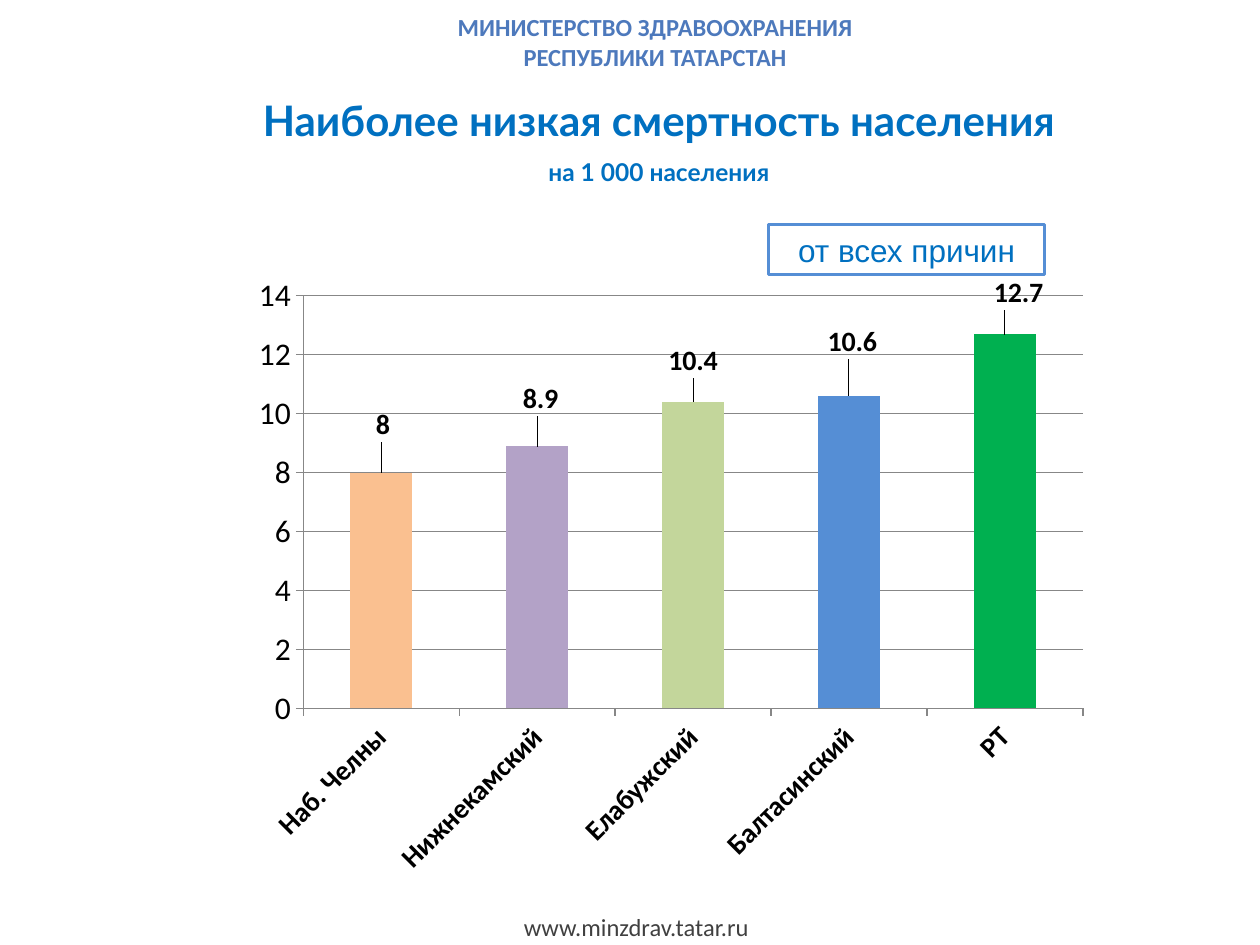
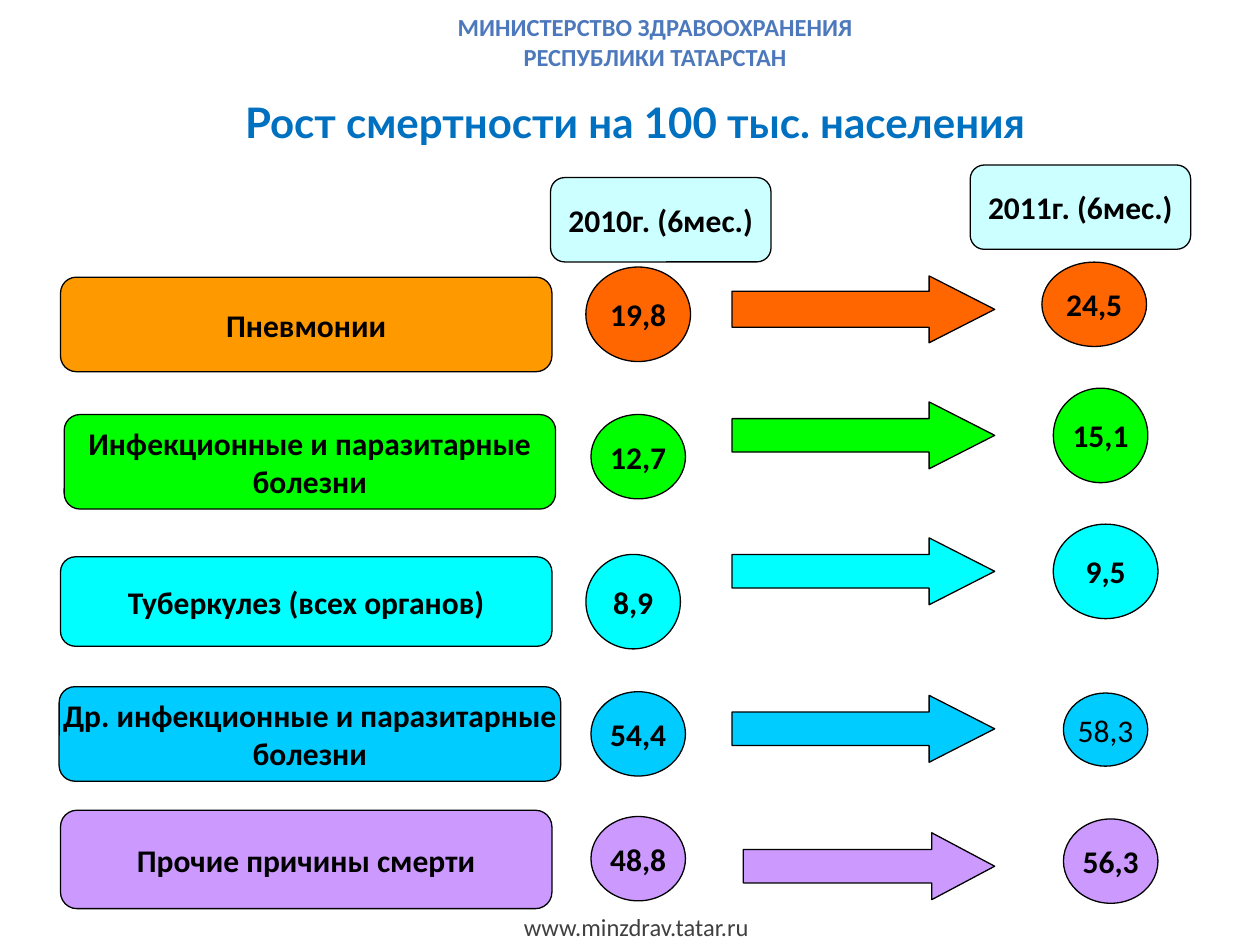
"""Build two slides on death rates: a column chart and a growth table of shapes."""
from lxml import etree
from pptx import Presentation
from pptx import util as u
from pptx.chart import data
from pptx.dml import color
from pptx.enum import chart as ch
from pptx.enum import shapes, text
from pptx.oxml import ns

RGB = color.RGBColor
BLACK = RGB(0, 0, 0)
GREY = RGB(0x40, 0x40, 0x40)
RULE = RGB(0x87, 0x87, 0x87)
HEAD = RGB(0x4D, 0x79, 0xBC)
BLUE = RGB(0x00, 0x70, 0xC0)
SKY = RGB(0x55, 0x8E, 0xD5)
PALE = RGB(0xCC, 0xFF, 0xFF)
AMBER = RGB(0xFF, 0x99, 0x00)
ORANGE = RGB(0xFF, 0x66, 0x00)
LIME = RGB(0x00, 0xFF, 0x00)
AQUA = RGB(0x00, 0xFF, 0xFF)
AZURE = RGB(0x00, 0xCC, 0xFF)
LILAC = RGB(0xCC, 0x99, 0xFF)
PEACH = RGB(0xFA, 0xC0, 0x90)
MAUVE = RGB(0xB3, 0xA2, 0xC7)
SAGE = RGB(0xC3, 0xD6, 0x9B)
GREEN = RGB(0x00, 0xB0, 0x50)

KIND = shapes.MSO_SHAPE
MID = text.PP_ALIGN.CENTER
TITLE = dict(name="Lato", size=24, bold=True, color=BLUE)
SUB = dict(TITLE, size=14)
TOP = dict(name="Calibri", size=14, bold=True, color=HEAD)
FOOT = dict(name="Calibri", size=14, color=GREY)
BODY = dict(name="Calibri", size=18, bold=True, color=BLACK)
PLAIN = dict(BODY, bold=False)
NOTE = dict(name="Arial", size=18, color=BLUE)
TICK = dict(BODY, size=16)

# Each column: name, value, bar colour, label shift as share of chart width and height


def style(font, form):
    """Apply a dict of format values to a font."""
    for key, val in form.items():
        if key == "color":
            font.color.rgb = val
        else:
            setattr(font, key, u.Pt(val) if key == "size" else val)


def write(frame, words, form, align=MID, wrap=True):
    """Fill a text frame, one paragraph for each line."""
    frame.word_wrap = wrap
    for num, line in enumerate(words.split("\n")):
        para = frame.add_paragraph() if num else frame.paragraphs[0]
        para.alignment = align
        run = para.add_run()
        run.text = line
        style(run.font, form)


def label(slide, spot, words, form, **opts):
    """Add a text box and return its frame."""
    frame = slide.shapes.add_textbox(*map(u.Pt, spot)).text_frame
    write(frame, words, form, **opts)
    frame.auto_size = text.MSO_AUTO_SIZE.SHAPE_TO_FIT_TEXT
    return frame


def block(slide, kind, spot, fill=None, words="", form=BODY, line=BLACK, width=0.75):
    """Add a preset shape with centred text."""
    shape = slide.shapes.add_shape(kind, *map(u.Pt, spot))
    shape.shadow.inherit = False
    if fill is None:
        shape.fill.background()
    else:
        shape.fill.solid()
        shape.fill.fore_color.rgb = fill
    shape.line.color.rgb = line
    shape.line.width = u.Pt(width)
    if words:
        write(shape.text_frame, words, form, wrap=False)
        shape.text_frame.vertical_anchor = text.MSO_ANCHOR.MIDDLE
    return shape


def page(deck):
    """Add a blank slide with the shared header and footer."""
    slide = deck.slides.add_slide(deck.slide_layouts[6])
    label(slide, (292.3, 517.7, 144, 24.2), "www.minzdrav.tatar.ru", FOOT,
          align=text.PP_ALIGN.LEFT, wrap=False)
    label(slide, (253.4, 3.6, 242, 41), "МИНИСТЕРСТВО ЗДРАВООХРАНЕНИЯ\nРЕСПУБЛИКИ ТАТАРСТАН",
          TOP, wrap=False)
    return slide


def place(node, index, **vals):
    """Insert a manual chart layout into a node."""
    lay = etree.Element(ns.qn("c:layout"))
    man = etree.SubElement(lay, ns.qn("c:manualLayout"))
    for key, val in vals.items():
        etree.SubElement(man, ns.qn("c:" + key)).set("val", str(val))
    node.insert(index, lay)


def draw_axis(axis, form):
    """Set the line, ticks and font of an axis."""
    axis.format.line.color.rgb = RULE
    axis.major_tick_mark = ch.XL_TICK_MARK.OUTSIDE
    axis.minor_tick_mark = ch.XL_TICK_MARK.NONE
    style(axis.tick_labels.font, form)


def draw_chart(slide, spot, cols):
    """Add the column chart with one colour and label shift per column."""
    info = data.CategoryChartData()
    info.categories = [col[0] for col in cols]
    info.add_series("Series 1", [col[1] for col in cols])
    chart = slide.shapes.add_chart(
        ch.XL_CHART_TYPE.COLUMN_CLUSTERED, *map(u.Pt, spot), info).chart
    chart.has_legend = chart.has_title = False
    style(chart.font, PLAIN)
    plot = chart.plots[0]
    plot.gap_width, plot.vary_by_categories = 150, False

    draw_axis(chart.category_axis, TICK)
    names = chart.category_axis._element.find(ns.qn("c:txPr"))
    names.find(ns.qn("a:bodyPr")).set("rot", "-2700000")
    axis = chart.value_axis
    draw_axis(axis, PLAIN)
    axis.minimum_scale, axis.maximum_scale, axis.major_unit = 0, 14, 2
    axis.major_gridlines.format.line.color.rgb = RULE

    bars = plot.series[0]
    bars.format.fill.solid()
    bars.format.fill.fore_color.rgb = GREEN
    for num, (_, _, fill, _) in enumerate(cols):
        point = bars.points[num]
        point.format.fill.solid()
        point.format.fill.fore_color.rgb = fill
        style(point.data_label.font, TICK)
        point.data_label.position = ch.XL_LABEL_POSITION.OUTSIDE_END
    for tag, col in zip(bars._element.iter(ns.qn("c:dLbl")), cols):
        place(tag, 1, x=col[3][0], y=col[3][1])

    area = chart._chartSpace.find(".//" + ns.qn("c:plotArea"))
    for old in area.findall(ns.qn("c:layout")):
        area.remove(old)
    place(area, 0, layoutTarget="inner", xMode="edge", yMode="edge",
          x=0.07, y=0.05, w=0.91, h=0.66)


def low_rates(deck):
    """Build the slide on the lowest death rates."""
    slide = page(deck)
    frame = label(slide, (50.4, 50.4, 652.3, 62),
                  "Наиболее низкая смертность населения", TITLE)
    frame.paragraphs[0]._p.get_or_add_pPr().set("indent", str(u.Pt(-11.5)))
    para = frame.add_paragraph()
    para.alignment, para.space_before = MID, u.Pt(7)
    run = para.add_run()
    run.text = "на 1 000 населения"
    style(run.font, SUB)
    block(slide, KIND.RECTANGLE, (439.2, 128.2, 157.7, 28.8), None,
          "от всех причин", NOTE, SKY, 2)
    draw_chart(slide, (139, 151.2, 489.6, 357.1), [
        ("Наб. Челны", 8, PEACH, (0.002, -0.04)),
        ("Нижнекамский", 8.9, MAUVE, (0.004, -0.04)),
        ("Елабужский", 10.4, SAGE, (0, -0.03)),
        ("Балтасинский", 10.6, SKY, (0.004, -0.05)),
        ("РТ", 12.7, GREEN, (0.016, -0.03)),
    ])


def growth(deck):
    """Build the slide that compares two half-years by cause."""
    slide = page(deck)
    rows = [
        ("Пневмонии", (34.6, 158.4, 280.8, 54), "19,8", (334.8, 152.6, 59.8, 54),
         157.7, "24,5", (595.4, 149.8, 59.8, 48.2), ORANGE),
        ("Инфекционные и паразитарные\nболезни", (36.7, 236.9, 280.8, 54),
         "12,7", (337.7, 236.9, 54, 48.2),
         229.7, "15,1", (601.9, 221.8, 54, 54), LIME),
        ("Туберкулез (всех органов)", (34.6, 318.2, 280.8, 51.1),
         "8,9", (334.8, 316.8, 54, 54),
         307.4, "9,5", (601.9, 299.5, 59.8, 54), AQUA),
        ("Др. инфекционные и паразитарные\nболезни", (33.8, 392.4, 286.6, 54),
         "54,4", (337.7, 395.3, 54, 48.2),
         397.4, "58,3", (607.7, 396, 48.2, 41.8), AZURE),
        ("Прочие причины смерти", (34.6, 463, 280.8, 56.2),
         "48,8", (337.7, 466.6, 54, 48.2),
         475.9, "56,3", (607.7, 468, 54, 48.2), LILAC),
    ]
    for cause, spot, old, left, top, new, right, fill in rows:
        block(slide, KIND.ROUNDED_RECTANGLE, spot, AMBER if fill == ORANGE else fill, cause)
        block(slide, KIND.OVAL, left, fill, old)
        start = 424.8 if fill == LILAC else 418.3
        arrow = block(slide, KIND.RIGHT_ARROW, (start, top, 568.4 - start, 38.2), fill)
        arrow.adjustments[0] = 0.54 if fill == ORANGE else 0.5
        arrow.adjustments[1] = 0.94 if fill == LILAC else 0.98
        block(slide, KIND.OVAL, right, fill, new, PLAIN if fill == AZURE else BODY)
    for left, top, words in ((314.6, 101.5, "2010г. (6мес.)"), (554.4, 94.3, "2011г. (6мес.)")):
        block(slide, KIND.ROUNDED_RECTANGLE, (left, top, 126, 48.2), PALE, words)
    label(slide, (2.9, 51.8, 720, 36), "Рост смертности на 100 тыс. населения", TITLE)


def main():
    """Build and save the deck."""
    deck = Presentation()
    deck.slide_width, deck.slide_height = u.Pt(720), u.Pt(540)
    low_rates(deck)
    growth(deck)
    deck.save("out.pptx")


if __name__ == "__main__":
    main()
